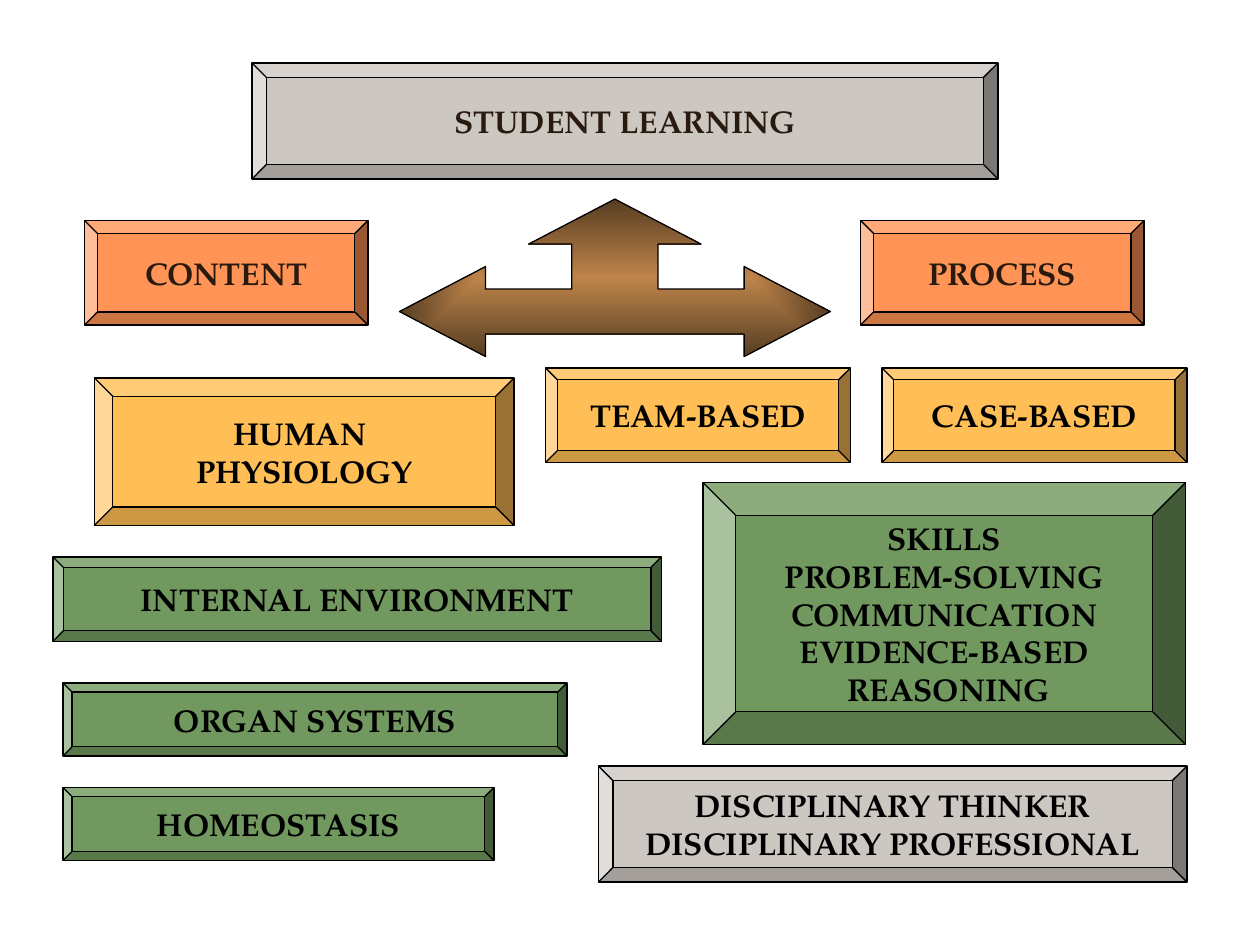
from lxml import etree
from pptx import Presentation, util as u
from pptx.dml.color import RGBColor
from pptx.enum import shapes, text
from pptx.oxml import ns

GREY, ORANGE, YELLOW, GREEN = "CDC7C2", "FF9456", "FFBF56", "71985E"
BLACK, BROWN = "000000", "291A10"


def color(hex_string):
    return RGBColor.from_string(hex_string)


def write(frame, lines, *, font, size=18, ink=BLACK, bold=True):
    """Put one centred paragraph per line into a text frame."""
    frame.word_wrap = False
    frame.vertical_anchor = text.MSO_ANCHOR.MIDDLE
    for index, line in enumerate(lines.split("\n")):
        paragraph = frame.add_paragraph() if index else frame.paragraphs[0]
        paragraph.alignment = text.PP_ALIGN.CENTER
        run = paragraph.add_run()
        run.text = line
        run.font.name = font
        run.font.size = u.Pt(size)
        run.font.bold = bold
        run.font.color.rgb = color(ink)


class Diagram:
    font = "TeX Gyre Pagella"
    line_width = 0.75

    def __init__(self, slide):
        self.slide = slide

    def outline(self, shape):
        shape.shadow.inherit = False
        shape.line.color.rgb = color(BLACK)
        shape.line.width = u.Pt(self.line_width)

    def box(self, lines, left, top, width, height, fill, ink=BLACK):
        shape = self.slide.shapes.add_shape(
            shapes.MSO_SHAPE.BEVEL,
            *(u.Inches(length) for length in (left, top, width, height)))
        shape.adjustments[0] = 0.125
        shape.fill.solid()
        shape.fill.fore_color.rgb = color(fill)
        self.outline(shape)
        write(shape.text_frame, lines, font=self.font, ink=ink)

    def three_way_arrow(self, left, top, width, height, center, edge):
        # Left half on a grid of 10 columns and 7 rows, then its mirror
        half = [(5, 0), (3, 2), (4, 2), (4, 4), (2, 4), (2, 3), (0, 5), (2, 7), (2, 6)]
        mirror = [(10 - x, y) for x, y in reversed(half[1:])]
        scale = (u.Inches(width) / 10, u.Inches(height) / 7)
        builder = self.slide.shapes.build_freeform(*half[0], scale=scale)
        builder.add_line_segments(half[1:] + mirror, close=True)
        shape = builder.convert_to_shape(u.Inches(left), u.Inches(top))
        self.outline(shape)

        # Gradient spreading from the middle
        shape.fill.gradient()
        for stop, shade in zip(shape.fill.gradient_stops, (center, edge)):
            stop.color.rgb = color(shade)
        gradient = shape._element.spPr.find(ns.qn("a:gradFill"))
        gradient.remove(gradient.find(ns.qn("a:lin")))
        spread = etree.SubElement(gradient, ns.qn("a:path"), path="rect")
        etree.SubElement(spread, ns.qn("a:fillToRect"),
                         {side: "50000" for side in "ltrb"})


def main():
    presentation = Presentation()
    presentation.slide_width = u.Inches(10)
    presentation.slide_height = u.Inches(7.5)
    diagram = Diagram(presentation.slides.add_slide(presentation.slide_layouts[6]))

    # Goal and its two sides
    diagram.box("STUDENT LEARNING", 2, 0.5, 5.92, 0.92, GREY, BROWN)
    diagram.box("CONTENT", 0.67, 1.75, 2.25, 0.83, ORANGE, BROWN)
    diagram.box("PROCESS", 6.83, 1.75, 2.25, 0.83, ORANGE, BROWN)
    diagram.three_way_arrow(3.17, 1.58, 3.42, 1.25, "BE844A", "573D22")

    # Content side
    diagram.box("HUMAN \nPHYSIOLOGY", 0.75, 3, 3.33, 1.17, YELLOW)
    diagram.box("INTERNAL ENVIRONMENT", 0.42, 4.42, 4.83, 0.67, GREEN)
    diagram.box("ORGAN SYSTEMS", 0.5, 5.42, 4, 0.58, GREEN)
    diagram.box("HOMEOSTASIS", 0.5, 6.25, 3.42, 0.58, GREEN)

    # Process side
    diagram.box("TEAM-BASED", 4.33, 2.92, 2.42, 0.75, YELLOW)
    diagram.box("CASE-BASED", 7, 2.92, 2.42, 0.75, YELLOW)
    diagram.box("SKILLS\nPROBLEM-SOLVING\nCOMMUNICATION\nEVIDENCE-BASED\n REASONING",
                5.58, 3.83, 3.83, 2.08, GREEN)
    diagram.box("DISCIPLINARY THINKER\nDISCIPLINARY PROFESSIONAL",
                4.75, 6.08, 4.67, 0.92, GREY)

    presentation.save("out.pptx")


if __name__ == "__main__":
    main()
